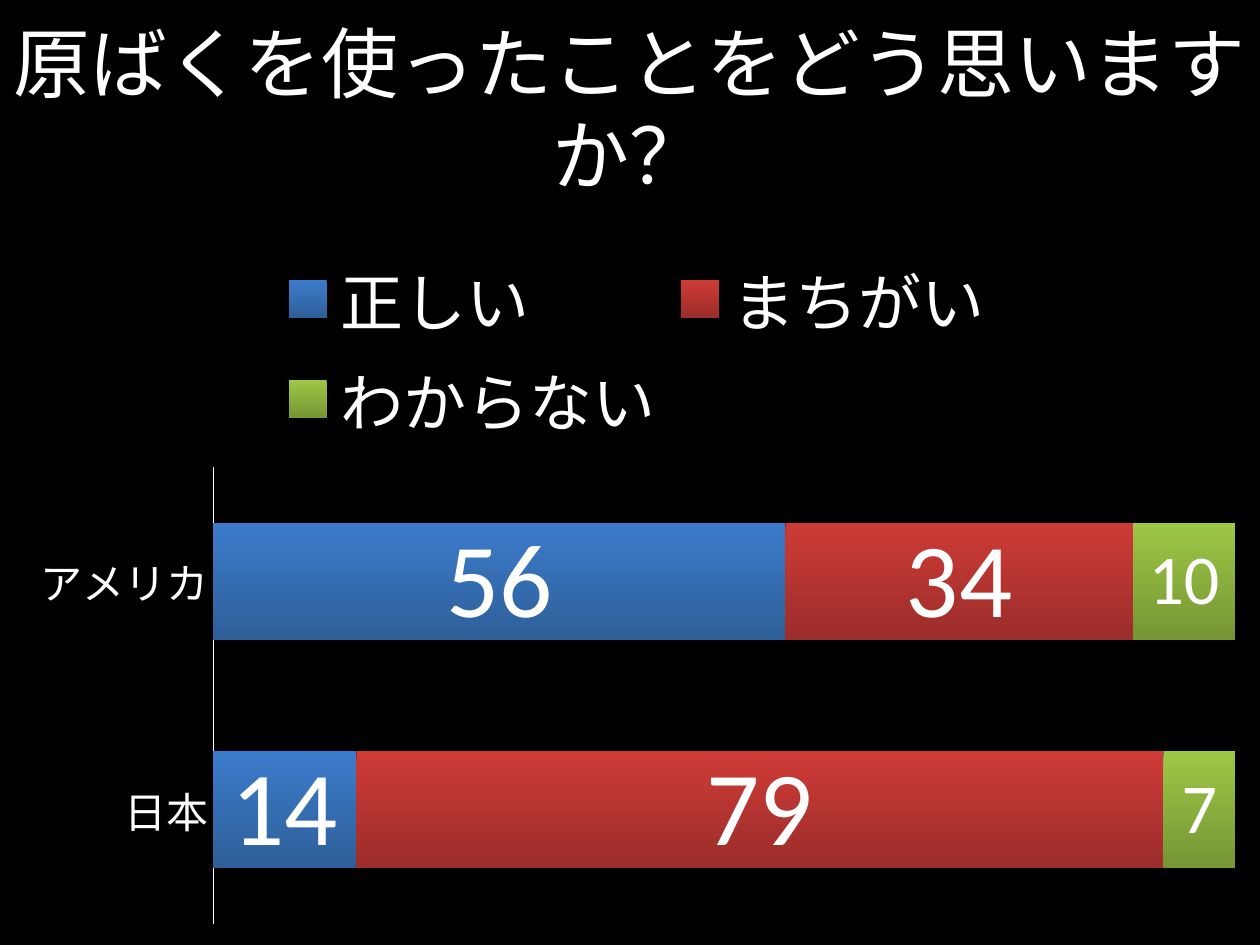
from lxml.etree import SubElement
from pptx import Presentation
from pptx.chart.data import CategoryChartData
from pptx.dml.color import RGBColor
from pptx.enum.chart import (XL_CHART_TYPE, XL_LABEL_POSITION, XL_LEGEND_POSITION,
                             XL_TICK_LABEL_POSITION, XL_TICK_MARK)
from pptx.enum.text import MSO_ANCHOR, PP_ALIGN
from pptx.oxml.ns import qn
from pptx.util import Cm, Pt

FONT = "Calibri"
COLORS = {
    "background": "000000",
    "text": "FFFFFF",
    "blue_top": "3C7BCB", "blue_bottom": "2E5F99",
    "red_top": "CE3B37", "red_bottom": "9B2D2A",
    "green_top": "9DC746", "green_bottom": "769535",
}
COUNTRIES = ["日本", "アメリカ"]
ANSWERS = [
    ("正しい", (14, 56), "blue", 60),
    ("まちがい", (79, 34), "red", 60),
    ("わからない", (7, 10), "green", 40),
]


def color(name):
    return RGBColor.from_string(COLORS[name])


def style_font(font, size):
    font.name = FONT
    font.size = Pt(size)
    font.bold = False
    font.color.rgb = color("text")


def add_title(slide, text):
    box = slide.shapes.add_textbox(Cm(0), Cm(0.58), Cm(25.4), Cm(3.18))
    frame = box.text_frame
    frame.word_wrap = True
    frame.vertical_anchor = MSO_ANCHOR.MIDDLE
    paragraph = frame.paragraphs[0]
    paragraph.alignment = PP_ALIGN.CENTER
    run = paragraph.add_run()
    run.text = text
    style_font(run.font, 44)


def set_layout(element, index, x, y, w, h, inner=False):
    for old_layout in element.findall(qn("c:layout")):
        element.remove(old_layout)
    layout = element.makeelement(qn("c:layout"))
    element.insert(index, layout)
    manual = SubElement(layout, qn("c:manualLayout"))
    settings = [("layoutTarget", "inner")] if inner else []
    settings += [("xMode", "edge"), ("yMode", "edge"),
                 ("x", x), ("y", y), ("w", w), ("h", h)]
    for name, value in settings:
        SubElement(manual, qn(f"c:{name}")).set("val", str(value))


def style_series(series, hue, label_size):
    fill = series.format.fill
    fill.gradient()
    fill.gradient_angle = 270
    for stop, end, position in zip(fill.gradient_stops, ("top", "bottom"), (0, 1)):
        stop.color.rgb = color(f"{hue}_{end}")
        stop.position = position
    labels = series.data_labels
    labels.show_value = True
    labels.position = XL_LABEL_POSITION.CENTER
    style_font(labels.font, label_size)


def style_axes(chart):
    axis = chart.category_axis
    axis.major_tick_mark = axis.minor_tick_mark = XL_TICK_MARK.NONE
    axis.tick_label_position = XL_TICK_LABEL_POSITION.NEXT_TO_AXIS
    axis.format.line.color.rgb = color("text")
    axis.format.line.width = Pt(0.75)
    style_font(axis.tick_labels.font, 24)
    chart.value_axis.visible = False
    chart.value_axis.has_major_gridlines = False


def add_legend(chart):
    chart.has_legend = True
    legend = chart.legend
    legend.position = XL_LEGEND_POSITION.TOP
    legend.include_in_layout = False
    style_font(legend.font, 36)
    set_layout(legend._element, 1, 0.2, 0.03, 0.6, 0.29)


def add_answer_chart(slide):
    data = CategoryChartData()
    data.categories = COUNTRIES
    for name, values, _, _ in ANSWERS:
        data.add_series(name, values)
    chart = slide.shapes.add_chart(XL_CHART_TYPE.BAR_STACKED_100, Cm(0.28), Cm(4.52),
                                   Cm(25.12), Cm(14.4), data).chart
    chart.has_title = False
    style_font(chart.font, 18)
    plot = chart.plots[0]
    plot.gap_width = 95
    plot.overlap = 100
    plot.vary_by_categories = False
    for series, (_, _, hue, label_size) in zip(plot.series, ANSWERS):
        style_series(series, hue, label_size)
    style_axes(chart)
    add_legend(chart)
    plot_area = chart._chartSpace.find(f".//{qn('c:plotArea')}")
    set_layout(plot_area, 0, 0.16, 0.34, 0.82, 0.64, inner=True)


def main():
    presentation = Presentation()
    presentation.slide_width = Cm(25.4)
    presentation.slide_height = Cm(19.05)
    slide = presentation.slides.add_slide(presentation.slide_layouts[6])
    slide.background.fill.solid()
    slide.background.fill.fore_color.rgb = color("background")
    add_title(slide, "原ばくを使ったことをどう思いますか？")
    add_answer_chart(slide)
    presentation.save("out.pptx")


if __name__ == "__main__":
    main()
